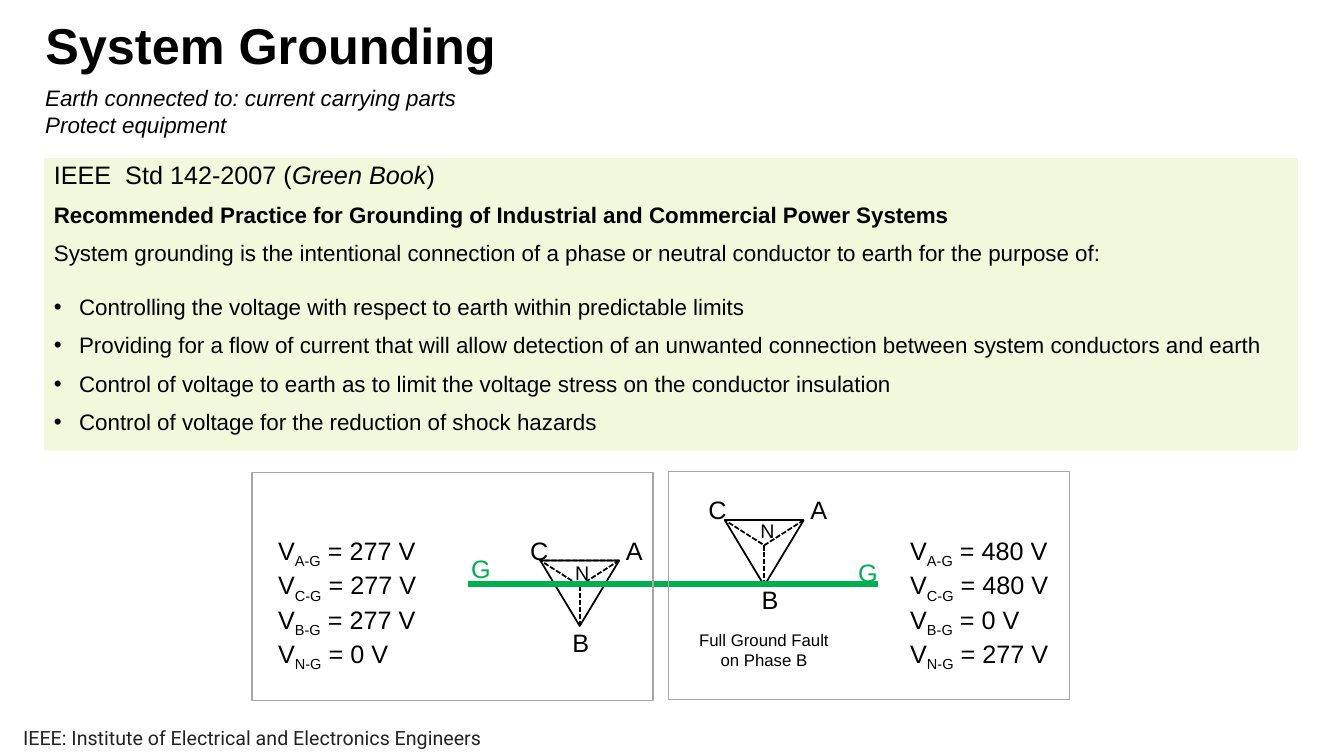
from dataclasses import dataclass

from lxml import etree
from pptx import Presentation
from pptx.dml.color import RGBColor
from pptx.enum.dml import MSO_LINE
from pptx.enum.shapes import MSO_CONNECTOR, MSO_SHAPE
from pptx.enum.text import MSO_ANCHOR, PP_ALIGN
from pptx.oxml.ns import qn
from pptx.util import Pt

RECTANGLE = MSO_SHAPE.RECTANGLE
TRIANGLE = MSO_SHAPE.ISOSCELES_TRIANGLE
STRAIGHT = MSO_CONNECTOR.STRAIGHT
DASH = MSO_LINE.SQUARE_DOT
LEFT, CENTER = PP_ALIGN.LEFT, PP_ALIGN.CENTER
TOP, MIDDLE = MSO_ANCHOR.TOP, MSO_ANCHOR.MIDDLE
COLORS = {"black": "000000", "white": "FFFFFF", "ground": "00B050",
          "panel": "F1F8DC", "frame": "A6A6A6", "note": "222222"}

TRIANGLE_WIDTH, TRIANGLE_HEIGHT, NEUTRAL_DEPTH = 56.4, 46.8, 18
LABEL_SIZE = 24


@dataclass
class Label:
    text: str
    center_x: float
    center_y: float
    size: float = 18
    color: str = "black"


@dataclass
class Diagram:
    left: float
    top: float
    labels: list[Label]


@dataclass
class Voltages:
    left: float
    values: dict[str, int]


@dataclass
class PanelLine:
    wording: list[str]
    size: float = 16
    bold: bool = False
    bullet: bool = False
    space_before: float = 10


DIAGRAMS = [
    Diagram(385.9, 400.3, [Label("C", 383.6, 393), Label("A", 452, 393),
                           Label("B", 413.8, 459), Label("N", 415.8, 409, 14)]),
    Diagram(517.7, 371.5, [Label("C", 510.8, 364), Label("A", 583.7, 364),
                           Label("B", 549, 428.5), Label("N", 548, 379, 14)]),
]
GROUND_LABELS = [Label("G", 341.4, 406.3, color="ground"),
                 Label("G", 617.8, 408.5, color="ground")]
VOLTAGES = [Voltages(191.5, {"A": 277, "C": 277, "B": 277, "N": 0}),
            Voltages(643, {"A": 480, "C": 480, "B": 0, "N": 277})]
FRAMES = [(180, 337.7), (477.4, 337)]
PANEL_LINES = [
    PanelLine(["IEEE  Std 142-2007 (", "Green Book", ")"], size=18),
    PanelLine(["Recommended Practice for Grounding of Industrial and Commercial Power Systems"],
              bold=True),
    PanelLine(["System grounding is the intentional connection of a phase or neutral "
               "conductor to earth for the purpose of:"]),
    PanelLine(["Controlling the voltage with respect to earth within predictable limits"],
              bullet=True, space_before=21.2),
    PanelLine(["Providing for a flow of current that will allow detection of an unwanted "
               "connection between system conductors and earth"], bullet=True),
    PanelLine(["Control of voltage to earth as to limit the voltage stress on the "
               "conductor insulation"], bullet=True),
    PanelLine(["Control of voltage for the reduction of shock hazards"], bullet=True),
]


def rgb(name: str) -> RGBColor:
    return RGBColor.from_string(COLORS[name])


def format_run(run, size: float, color: str = "black", bold: bool = False,
               italic: bool = False, font: str = "Arial") -> None:
    run.font.name, run.font.size = font, Pt(size)
    run.font.bold, run.font.italic = bold, italic
    run.font.color.rgb = rgb(color)


def add_text(slide, lines: list[str], left: float, top: float, width: float, height: float,
             size: float, color: str = "black", align=LEFT, anchor=TOP, wrap: bool = True,
             italic: bool = False, font: str = "Arial") -> None:
    box = slide.shapes.add_textbox(Pt(left), Pt(top), Pt(width), Pt(height))
    frame = box.text_frame
    frame.text = "\n".join(lines)
    frame.word_wrap, frame.vertical_anchor = wrap, anchor
    for paragraph in frame.paragraphs:
        paragraph.alignment = align
        for run in paragraph.runs:
            format_run(run, size, color, italic=italic, font=font)


def add_label(slide, label: Label) -> None:
    add_text(slide, [label.text], label.center_x - LABEL_SIZE / 2,
             label.center_y - LABEL_SIZE / 2, LABEL_SIZE, LABEL_SIZE, label.size,
             label.color, CENTER, MIDDLE, wrap=False)


def add_block(slide, kind, left: float, top: float, width: float, height: float,
              fill: str = "", line: str = "", weight: float = 1):
    shape = slide.shapes.add_shape(kind, Pt(left), Pt(top), Pt(width), Pt(height))
    shape.shadow.inherit = False
    if fill:
        shape.fill.solid()
        shape.fill.fore_color.rgb = rgb(fill)
    else:
        shape.fill.background()
    if line:
        shape.line.color.rgb = rgb(line)
        shape.line.width = Pt(weight)
    else:
        shape.line.fill.background()
    return shape


def add_line(slide, start: tuple[float, float], end: tuple[float, float],
             color: str, weight: float):
    line = slide.shapes.add_connector(STRAIGHT, *(Pt(value) for value in (*start, *end)))
    line.line.color.rgb = rgb(color)
    line.line.width = Pt(weight)
    etree.SubElement(line._element.spPr, qn("a:effectLst"))
    return line


def add_title(slide) -> None:
    title = slide.shapes.title
    title.left, title.top, title.width, title.height = Pt(25.2), Pt(1.4), Pt(846), Pt(62)
    title.text_frame.text = "System Grounding"
    title.text_frame.vertical_anchor = TOP
    paragraph = title.text_frame.paragraphs[0]
    paragraph.alignment, paragraph.line_spacing = LEFT, Pt(48)
    format_run(paragraph.runs[0], 36, bold=True)


def add_panel(slide) -> None:
    panel = add_block(slide, RECTANGLE, 31.4, 113, 895.6, 208.8, fill="panel")
    frame = panel.text_frame
    frame.word_wrap, frame.vertical_anchor = True, TOP
    for index, line in enumerate(PANEL_LINES):
        paragraph = frame.add_paragraph() if index else frame.paragraphs[0]
        paragraph.alignment, paragraph.line_spacing = LEFT, 0.9
        paragraph.space_before = Pt(line.space_before)
        for position, wording in enumerate(line.wording):
            run = paragraph.add_run()
            run.text = wording
            format_run(run, line.size, bold=line.bold, italic=position == 1)
        if line.bullet:
            properties = paragraph._p.get_or_add_pPr()
            properties.set("marL", str(Pt(18)))
            properties.set("indent", str(-Pt(18)))
            etree.SubElement(properties, qn("a:buFont"), typeface="Arial")
            etree.SubElement(properties, qn("a:buChar"), char="•")


def add_diagram(slide, diagram: Diagram) -> None:
    """Draw the delta of phases, with dashed lines from its corners to the neutral."""
    left, top = diagram.left, diagram.top
    delta = add_block(slide, TRIANGLE, left, top, TRIANGLE_WIDTH, TRIANGLE_HEIGHT,
                      "white", "black", 1.25)
    neutral = add_block(slide, TRIANGLE, left, top, TRIANGLE_WIDTH, NEUTRAL_DEPTH,
                        line="black", weight=1.25)
    delta.rotation = neutral.rotation = 180
    middle = left + TRIANGLE_WIDTH / 2
    stem = add_line(slide, (middle, top + NEUTRAL_DEPTH), (middle, top + TRIANGLE_HEIGHT),
                    "black", 1.25)
    neutral.line.dash_style = stem.line.dash_style = DASH
    for label in diagram.labels:
        add_label(slide, label)


def add_voltages(slide, voltages: Voltages) -> None:
    box = slide.shapes.add_textbox(Pt(voltages.left), Pt(378.7), Pt(123.8), Pt(94.3))
    frame = box.text_frame
    frame.word_wrap = True
    for index, (phase, volts) in enumerate(voltages.values.items()):
        paragraph = frame.add_paragraph() if index else frame.paragraphs[0]
        for text in ("V", f"{phase}-G", f" = {volts} V"):
            run = paragraph.add_run()
            run.text = text
            format_run(run, 18)
        paragraph.runs[1]._r.get_or_add_rPr().set("baseline", "-25000")


def main() -> None:
    presentation = Presentation()
    presentation.slide_width, presentation.slide_height = Pt(960), Pt(540)
    slide = presentation.slides.add_slide(presentation.slide_layouts[5])
    add_title(slide)
    add_text(slide, ["Earth connected to: current carrying parts", "Protect equipment"],
             25.2, 56.9, 442, 46, 16, italic=True)
    add_panel(slide)
    for diagram in DIAGRAMS:
        add_diagram(slide, diagram)
    add_line(slide, (334, 417.3), (627.2, 417.3), "ground", 4.5)
    for label in GROUND_LABELS:
        add_label(slide, label)
    for left, top in FRAMES:
        add_block(slide, RECTANGLE, left, top, 286.5, 162.7, line="frame")
    for voltages in VOLTAGES:
        add_voltages(slide, voltages)
    add_text(slide, ["Full Ground Fault on Phase B"], 486, 446.4, 119.5, 36, 12, align=CENTER)
    add_text(slide, ["IEEE: Institute of Electrical and Electronics Engineers"],
             9.4, 514.8, 348.5, 24.5, 14, "note", wrap=False, font="Roboto")
    presentation.save("out.pptx")


if __name__ == "__main__":
    main()
